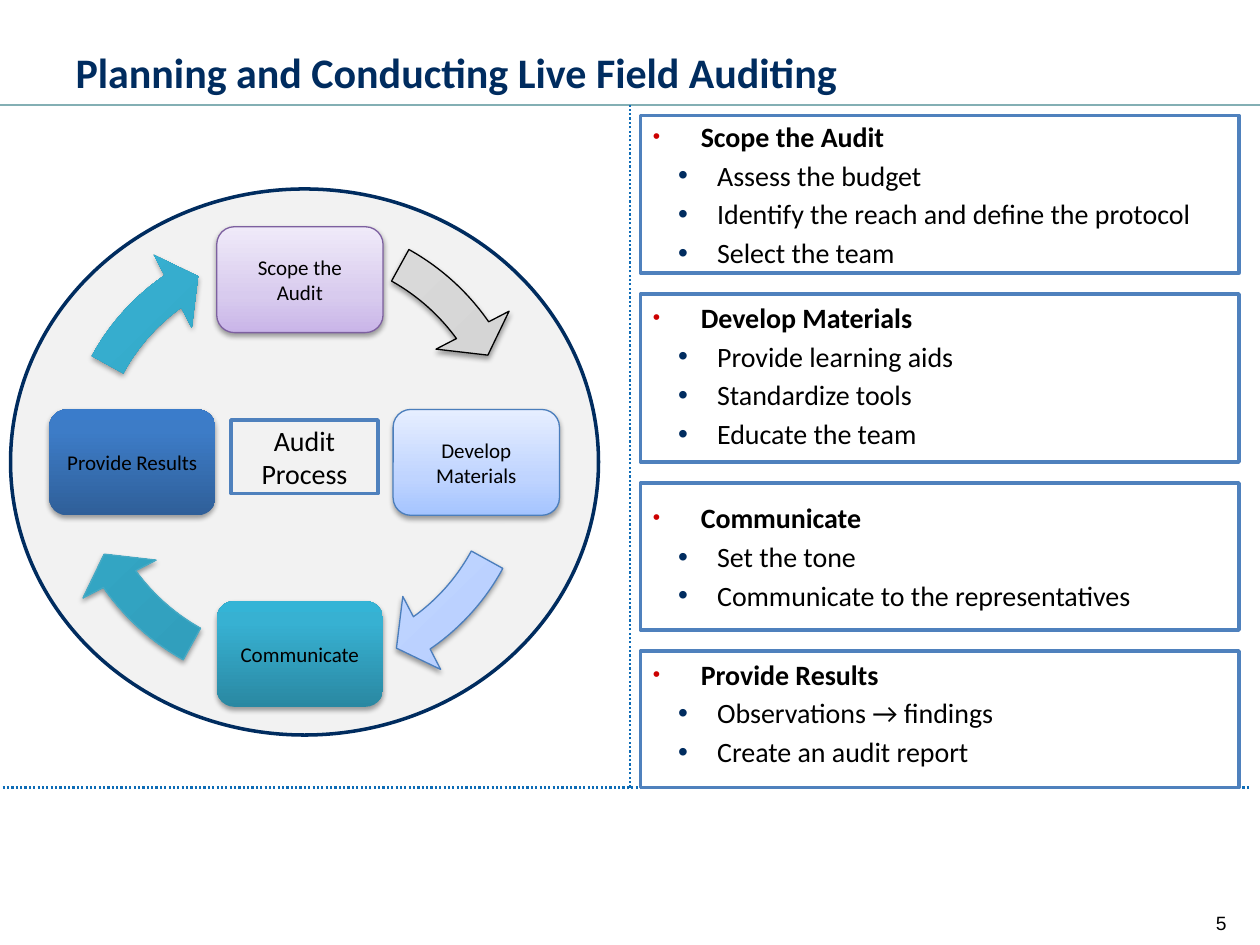
from dataclasses import dataclass

from lxml.etree import SubElement
from pptx import Presentation
from pptx.dml.color import RGBColor
from pptx.enum.dml import MSO_LINE
from pptx.enum.shapes import MSO_CONNECTOR, MSO_SHAPE
from pptx.enum.text import MSO_ANCHOR, MSO_AUTO_SIZE, PP_ALIGN
from pptx.oxml.ns import qn
from pptx.util import Inches, Pt


@dataclass(frozen=True)
class Theme:
    font: str = "Calibri"
    number_font: str = "Arial"
    title_size: int = 24
    body_size: int = 16
    node_size: int = 12
    number_size: int = 11
    navy: str = "002C5F"
    black: str = "000000"
    white: str = "FFFFFF"
    disc: str = "F2F2F2"
    border: str = "4F81BD"
    dots: str = "0E6CB6"
    rule: str = "83AFB4"
    red: str = "CC0000"
    # Each gradient runs from bottom to top as (position, colour) stops.
    purple: tuple = ((0, "C9B5E8"), (35, "D8CBEE"), (100, "F0EAF9"))
    pale_blue: tuple = ((0, "A4C4FF"), (35, "BFD4FF"), (100, "E6EEFF"))
    teal: tuple = ((0, "2A88A2"), (80, "37B1D2"), (100, "34B4D6"))
    blue: tuple = ((0, "2F5F99"), (80, "3D7CC7"), (100, "3A7CCB"))
    grey: tuple = ((0, "BDBDBD"), (35, "D1D1D1"), (100, "EEEEEE"))


theme = Theme()
presentation = Presentation()
presentation.slide_width = Inches(10)
presentation.slide_height = Inches(7.5)
unit = presentation.slide_width / 120  # grid of 120 columns by 90 rows
slide = presentation.slides.add_slide(presentation.slide_layouts[5])


def add_text(paragraph, text, size, color=theme.black, bold=False, font=theme.font):
    run = paragraph.add_run()
    run.text = text
    run.font.name = font
    run.font.size = Pt(size)
    run.font.bold = bold
    run.font.color.rgb = RGBColor.from_string(color)


def add_panel(kind, box, fill=None, line=None, line_width=0.75):
    """Add a shape on the grid; a tuple of stops gives a shadowed gradient."""
    shape = slide.shapes.add_shape(kind, *[round(unit * value) for value in box])
    shape.shadow.inherit = False
    if line:
        shape.line.color.rgb = RGBColor.from_string(line)
        shape.line.width = Pt(line_width)
    else:
        shape.line.fill.background()
    if isinstance(fill, tuple):
        shape.fill.gradient()
        shape.fill.gradient_angle = 90
        properties = shape._element.spPr
        stops = properties.find(".//" + qn("a:gsLst"))
        stops.clear()
        for position, color in fill:
            stop = SubElement(stops, qn("a:gs"), pos=str(position * 1000))
            SubElement(stop, qn("a:srgbClr"), val=color)
        shadow = SubElement(
            properties.find(qn("a:effectLst")), qn("a:outerShdw"),
            blurRad=str(Pt(3.1)), dist=str(Pt(1.7)), dir="5400000", rotWithShape="0")
        shadow_color = SubElement(shadow, qn("a:srgbClr"), val=theme.black)
        SubElement(shadow_color, qn("a:alpha"), val="37000")
    elif fill:
        shape.fill.solid()
        shape.fill.fore_color.rgb = RGBColor.from_string(fill)
    else:
        shape.fill.background()
    shape.text_frame.word_wrap = True
    shape.text_frame.vertical_anchor = MSO_ANCHOR.MIDDLE
    return shape


# Title and page number
title = slide.shapes.title
title.left, title.top, title.width, title.height = [
    round(unit * value) for value in (6, 3.6, 108, 6.4)]
title.text_frame.auto_size = MSO_AUTO_SIZE.NONE
title.text_frame.vertical_anchor = MSO_ANCHOR.MIDDLE
title.text_frame.paragraphs[0].alignment = PP_ALIGN.LEFT
add_text(title.text_frame.paragraphs[0], "Planning and Conducting Live Field Auditing",
         theme.title_size, theme.navy, bold=True)

page_number = slide.shapes.add_textbox(
    *[round(unit * value) for value in (90, 86.16, 28, 4.8)])
page_number.text_frame.word_wrap = True
page_number.text_frame.paragraphs[0].alignment = PP_ALIGN.RIGHT
add_text(page_number.text_frame.paragraphs[0], "5", theme.number_size,
         font=theme.number_font)

# Audit cycle: disc, four steps and the arrows between them
add_panel(MSO_SHAPE.OVAL, (1, 18, 56, 52), theme.disc, theme.navy, 2)

node_width, node_height = 15.84, 10.08
nodes = [
    ("Scope the Audit", 28.56, 26.64, theme.purple, "7D60A0"),
    ("Develop Materials", 45.36, 44.04, theme.pale_blue, "4B7EBC"),
    ("Communicate", 28.56, 62.28, theme.teal, None),
    ("Provide Results", 12.6, 44.04, theme.blue, None),
]
for text, center_x, center_y, fill, line in nodes:
    box = (center_x - node_width / 2, center_y - node_height / 2, node_width, node_height)
    node = add_panel(MSO_SHAPE.ROUNDED_RECTANGLE, box, fill, line)
    node.text_frame.margin_left = node.text_frame.margin_right = Inches(0.09)
    node.text_frame.paragraphs[0].alignment = PP_ALIGN.CENTER
    add_text(node.text_frame.paragraphs[0], text, theme.node_size)

arrows = [
    (3.72, 18.6, theme.grey, theme.black),
    (3.72, 18.6, theme.pale_blue, "4B7EBC"),
    (3.72, 18.6, theme.teal, "46AAC5"),
    (3.96, 20.04, theme.teal, None),
]
full_turn, quarter_turn = 216, 54  # angle adjustments count 0.6 per degree
for index, (left, top, fill, line) in enumerate(arrows):
    arrow = add_panel(MSO_SHAPE.CIRCULAR_ARROW, (left, top, 48.96, 49.4), fill, line)
    arrow.rotation = 315.7
    head_angle = 5.47 + index * quarter_turn
    tail_angle = (205.87 + index * quarter_turn) % full_turn
    for position, value in enumerate((0.07, 4.66, head_angle, tail_angle, 0.08)):
        arrow.adjustments[position] = value

# Rule under the title and dotted dividers
lines = [
    (0, 10, 120, 10, theme.rule, 1, None),
    (-1, 75, 119, 75, theme.dots, 1.25, MSO_LINE.ROUND_DOT),
    (60, 75, 60, 10, theme.dots, 1.25, MSO_LINE.ROUND_DOT),
]
for *ends, color, width, dash in lines:
    connector = slide.shapes.add_connector(
        MSO_CONNECTOR.STRAIGHT, *[round(unit * value) for value in ends])
    connector.line.color.rgb = RGBColor.from_string(color)
    connector.line.width = Pt(width)
    if dash:
        connector.line.dash_style = dash
    SubElement(connector._element.spPr, qn("a:effectLst"))

# Step details, stacked with equal gaps
details = [
    (15, MSO_ANCHOR.MIDDLE, "Scope the Audit",
     ["Assess the budget", "Identify the reach and define the protocol",
      "Select the team"]),
    (16, MSO_ANCHOR.TOP, "Develop Materials",
     ["Provide learning aids", "Standardize tools", "Educate the team"]),
    (14, MSO_ANCHOR.MIDDLE, "Communicate",
     ["Set the tone", "Communicate to the representatives"]),
    (13, MSO_ANCHOR.TOP, "Provide Results",
     ["Observations → findings", "Create an audit report"]),
]
top, gap = 11, 2
for height, anchor, heading, items in details:
    panel = add_panel(MSO_SHAPE.RECTANGLE, (61, top, 57, height),
                      theme.white, theme.border, 2)
    top += height + gap
    frame = panel.text_frame
    frame.vertical_anchor = anchor
    for index, text in enumerate([heading, *items]):
        is_heading = index == 0
        paragraph = frame.paragraphs[0] if is_heading else frame.add_paragraph()
        paragraph.alignment = PP_ALIGN.LEFT
        paragraph.level = 0 if is_heading else 1
        margin, indent = (0.38, -0.38) if is_heading else (0.51, -0.31)
        properties = paragraph._p.get_or_add_pPr()
        properties.set("marL", str(Inches(margin)))
        properties.set("indent", str(Inches(indent)))
        bullet_color = SubElement(properties, qn("a:buClr"))
        SubElement(bullet_color, qn("a:srgbClr"),
                   val=theme.red if is_heading else theme.navy)
        SubElement(properties, qn("a:buSzPct"), val="75000" if is_heading else "100000")
        SubElement(properties, qn("a:buFont"), typeface=theme.number_font)
        SubElement(properties, qn("a:buChar"), char="•")
        if not is_heading:
            paragraph.space_before = Pt(3)
        add_text(paragraph, text, theme.body_size, bold=is_heading)

# Label in the middle of the cycle
label = add_panel(MSO_SHAPE.RECTANGLE, (22, 40, 14, 7), line=theme.border, line_width=2)
label.text_frame.word_wrap = False
for index, word in enumerate(("Audit", "Process")):
    paragraph = label.text_frame.add_paragraph() if index else label.text_frame.paragraphs[0]
    paragraph.alignment = PP_ALIGN.CENTER
    add_text(paragraph, word, theme.body_size)

presentation.save("out.pptx")
